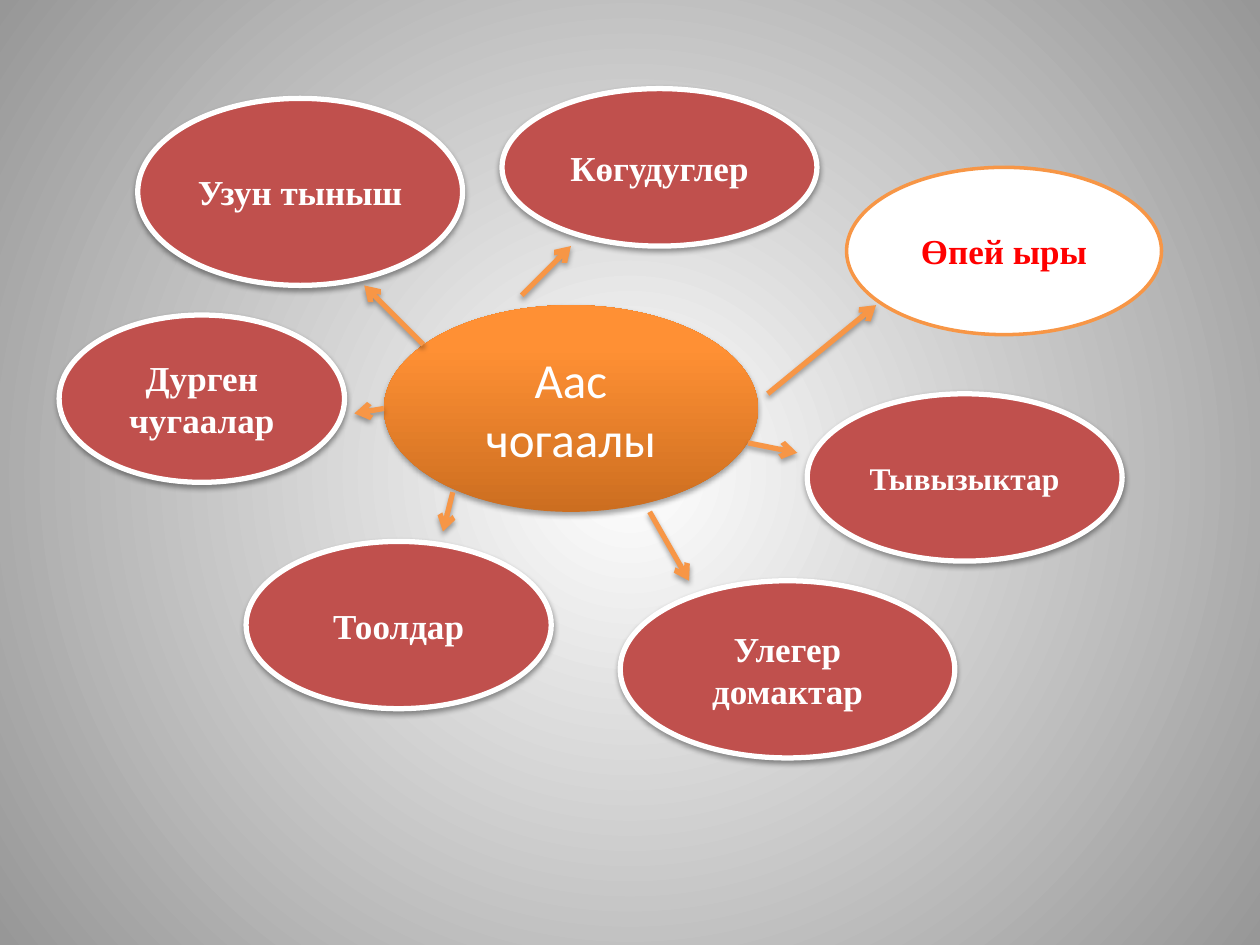
from lxml import etree
from pptx import Presentation
from pptx.dml.color import RGBColor
from pptx.enum.shapes import MSO_CONNECTOR, MSO_SHAPE
from pptx.enum.text import MSO_ANCHOR, PP_ALIGN
from pptx.oxml.ns import qn
from pptx.util import Inches, Pt

STRAIGHT = MSO_CONNECTOR.STRAIGHT
OVAL = MSO_SHAPE.OVAL
MIDDLE = MSO_ANCHOR.MIDDLE
CENTER = PP_ALIGN.CENTER

SLIDE_WIDTH, SLIDE_HEIGHT = Inches(10), Inches(7.5)
UNIT = SLIDE_WIDTH / 128  # square grid of 128 columns and 96 rows

COLORS = {
    "white": "FFFFFF",
    "edge": "979797",
    "topic": "C0504D",
    "accent": "F79646",
    "highlight": "FF0000",
    "hub_dark": "CC6E20",
    "hub_mid": "FF9034",
    "hub_light": "FF9136",
    "shadow": "000000",
}

HUB_FONT = {"name": "Calibri", "size": Pt(28), "bold": False}
TOPIC_FONT = {"name": "Times New Roman", "size": Pt(20), "bold": True}
SMALL_TOPIC_FONT = {**TOPIC_FONT, "size": Pt(18)}

HUB_BOX = (39, 31, 38, 21)
LULLABY_BOX = (86, 17, 32, 17)

# wording, (column, row, columns wide, rows high), font
TOPICS = [
    ("Тывызыктар", (82, 40, 32, 17), SMALL_TOPIC_FONT),
    ("Улегер домактар", (63, 59, 34, 18), TOPIC_FONT),
    ("Тоолдар", (25, 55, 31, 17), TOPIC_FONT),
    ("Дурген чугаалар", (6, 32, 29, 17), TOPIC_FONT),
    ("Узун тыныш", (14, 10, 33, 19), TOPIC_FONT),
    ("Кɵгудуглер", (51, 9, 32, 16), TOPIC_FONT),
]

# start column, start row, end column, end row
LULLABY_ARROW = (78, 40, 89, 31)
TOPIC_ARROWS = [
    (66, 52, 70, 59),
    (76, 45, 81, 46),
    (53, 30, 58, 25),
    (43, 35, 37, 29),
    (39, 41.5, 36, 42),
    (46, 50, 45, 54),
]


def rgb(color):
    return RGBColor.from_string(COLORS[color])


def grid(cells):
    return [round(cell * UNIT) for cell in cells]


def add_node(parent, tag, **attributes):
    node = etree.SubElement(parent, qn(tag))
    for key, value in attributes.items():
        node.set(key, str(value))
    return node


def set_gradient(fill, owner, stops):
    """Give fill the stops and return its gradient element, without direction."""
    fill.gradient()
    gradient = next(owner.iter(qn("a:gradFill")))
    for child in list(gradient):
        gradient.remove(child)
    stop_list = add_node(gradient, "a:gsLst")
    for percent, color in stops:
        stop = add_node(stop_list, "a:gs", pos=percent * 1000)
        add_node(stop, "a:srgbClr", val=COLORS[color])
    return gradient


def add_shadow(element, distance, opacity):
    properties = element.find(qn("p:spPr"))
    effects = properties.find(qn("a:effectLst"))
    if effects is None:
        effects = add_node(properties, "a:effectLst")
    shadow = add_node(effects, "a:outerShdw", blurRad=Pt(3.1), dist=Pt(distance),
                      dir=90 * 60000, rotWithShape=0)
    color = add_node(shadow, "a:srgbClr", val=COLORS["shadow"])
    add_node(color, "a:alpha", val=opacity * 1000)


def paint_background(slide):
    gradient = set_gradient(slide.background.fill, slide.element,
                            [(0, "white"), (100, "edge")])
    circle = add_node(gradient, "a:path", path="circle")
    add_node(circle, "a:fillToRect", l=50000, t=50000, r=50000, b=50000)


def add_oval(slide, wording, box, font_format, text_color="white"):
    oval = slide.shapes.add_shape(OVAL, *grid(box))
    oval.shadow.inherit = False
    frame = oval.text_frame
    frame.word_wrap = True
    frame.vertical_anchor = MIDDLE
    paragraph = frame.paragraphs[0]
    paragraph.alignment = CENTER
    run = paragraph.add_run()
    run.text = wording
    for key, value in font_format.items():
        setattr(run.font, key, value)
    run.font.color.rgb = rgb(text_color)
    return oval


def add_hub(slide):
    hub = add_oval(slide, "Аас чогаалы", HUB_BOX, HUB_FONT)
    hub.line.fill.background()
    gradient = set_gradient(hub.fill, hub.element,
                            [(0, "hub_dark"), (80, "hub_mid"), (100, "hub_light")])
    add_node(gradient, "a:lin", ang=270 * 60000, scaled=0)
    add_shadow(hub.element, distance=1.8, opacity=35)


def paint_oval(oval, fill, outline, width):
    oval.fill.solid()
    oval.fill.fore_color.rgb = rgb(fill)
    oval.line.color.rgb = rgb(outline)
    oval.line.width = Pt(width)


def add_topic(slide, wording, box, font_format):
    topic = add_oval(slide, wording, box, font_format)
    paint_oval(topic, "topic", "white", 3)
    add_shadow(topic.element, distance=1.6, opacity=38)


def add_arrow(slide, ends):
    arrow = slide.shapes.add_connector(STRAIGHT, *grid(ends))
    arrow.line.color.rgb = rgb("accent")
    arrow.line.width = Pt(3)
    add_node(next(arrow.element.iter(qn("a:ln"))), "a:tailEnd", type="arrow")
    add_shadow(arrow.element, distance=1.8, opacity=35)


def main():
    presentation = Presentation()
    presentation.slide_width = SLIDE_WIDTH
    presentation.slide_height = SLIDE_HEIGHT
    slide = presentation.slides.add_slide(presentation.slide_layouts[6])

    paint_background(slide)
    add_hub(slide)
    add_arrow(slide, LULLABY_ARROW)
    lullaby = add_oval(slide, "Өпей ыры", LULLABY_BOX, TOPIC_FONT, "highlight")
    paint_oval(lullaby, "white", "accent", 2)
    for topic in TOPICS:
        add_topic(slide, *topic)
    for ends in TOPIC_ARROWS:
        add_arrow(slide, ends)

    presentation.save("out.pptx")


if __name__ == "__main__":
    main()
